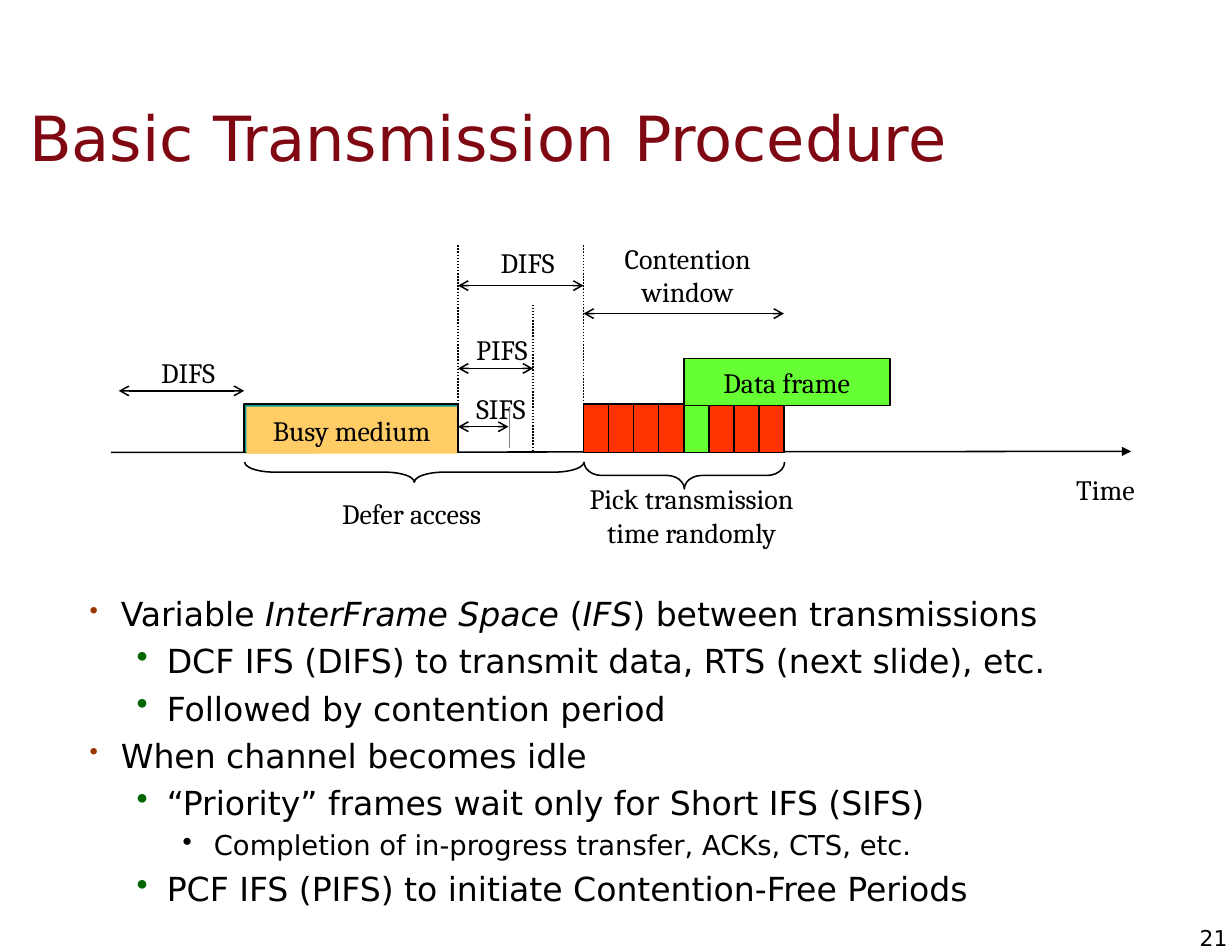
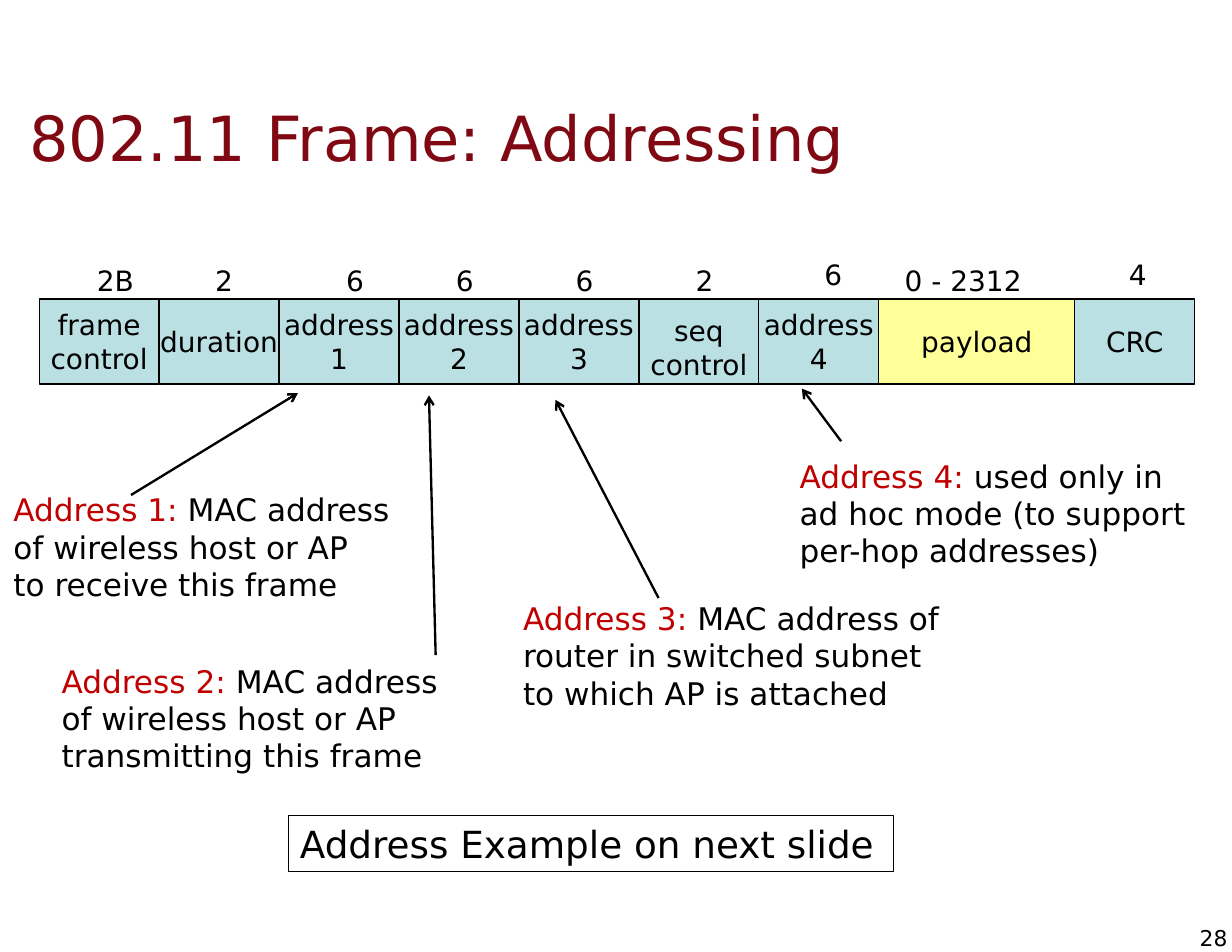
from dataclasses import dataclass

from lxml import etree
from pptx import Presentation
from pptx.dml.color import RGBColor
from pptx.enum.dml import MSO_LINE
from pptx.enum.shapes import MSO_CONNECTOR, MSO_SHAPE
from pptx.enum.text import MSO_ANCHOR, PP_ALIGN
from pptx.oxml.ns import qn
from pptx.util import Inches, Pt

RECTANGLE, BRACE = MSO_SHAPE.RECTANGLE, MSO_SHAPE.LEFT_BRACE
STRAIGHT, DOTTED = MSO_CONNECTOR.STRAIGHT, MSO_LINE.ROUND_DOT
TOP, MIDDLE = MSO_ANCHOR.TOP, MSO_ANCHOR.MIDDLE
LEFT, CENTER, RIGHT = PP_ALIGN.LEFT, PP_ALIGN.CENTER, PP_ALIGN.RIGHT

COLORS = {
    "title": "7F0813", "text": "000000", "address": "C00000",
    "bullet1": "993300", "bullet2": "006600", "bullet3": "000000",
    "busy": "FFCC66", "busy edge": "009999", "slot": "FF3300",
    "data": "66FF33", "marker": "808080",
    "header": "BBE0E3", "payload": "FFFF99",
}
SANS, SERIF = "DejaVu Sans", "Cambria"
COLUMNS, ROWS = 110, 85
CELL = 0.1  # one grid column or row, in inches
PLAIN_INSETS = (0.1, 0.05)
WIDE_INSETS = (0.11, 0.06)


def units(value):
    return Inches(value * CELL)


def color(name):
    return RGBColor.from_string(COLORS[name])


@dataclass
class Region:
    """A part of a slide; everything inside is placed from its corner."""
    slide: object
    column: float
    row: float

    def point(self, column, row):
        return units(self.column + column), units(self.row + row)

    def text(self, column, row, width, height, paragraphs, size=18, font=SANS,
             align=CENTER, anchor=TOP, wrap=False, insets=PLAIN_INSETS):
        shape = self.slide.shapes.add_textbox(
            *self.point(column, row), units(width), units(height))
        write(shape, paragraphs, size, font, align, anchor, wrap, insets)
        return shape

    def shape(self, kind, column, row, width, height, fill=None, line=1):
        shape = self.slide.shapes.add_shape(
            kind, *self.point(column, row), units(width), units(height))
        shape.shadow.inherit = False
        if fill:
            shape.fill.solid()
            shape.fill.fore_color.rgb = color(fill)
        else:
            shape.fill.background()
        if line:
            shape.line.color.rgb = color("text")
            shape.line.width = Pt(line)
        else:
            shape.line.fill.background()
        return shape

    def line(self, start, end, width=1, head=None, tail=None, dash=None, ink="text"):
        connector = self.slide.shapes.add_connector(
            STRAIGHT, *self.point(*start), *self.point(*end))
        connector.line.color.rgb = color(ink)
        connector.line.width = Pt(width)
        if dash:
            connector.line.dash_style = dash
        outline = connector.line._get_or_add_ln()
        for tag, arrow in (("a:headEnd", head), ("a:tailEnd", tail)):
            if arrow:
                etree.SubElement(outline, qn(tag), type=arrow)
        etree.SubElement(connector._element.spPr, qn("a:effectLst"))


def add_runs(paragraph, runs, size, font):
    """Each run is a string or (string, color name, italic)."""
    for run_data in runs:
        text, ink, italic = (run_data, "text", False) if isinstance(run_data, str) else run_data
        if text == "\n":
            paragraph.add_line_break()
            continue
        run = paragraph.add_run()
        run.text = text
        run.font.size = Pt(size)
        run.font.name = font
        run.font.italic = italic
        run.font.color.rgb = color(ink)


def write(shape, paragraphs, size=18, font=SANS, align=CENTER, anchor=MIDDLE,
          wrap=False, insets=PLAIN_INSETS):
    frame = shape.text_frame
    frame.word_wrap = wrap
    frame.vertical_anchor = anchor
    frame.margin_left = frame.margin_right = Inches(insets[0])
    frame.margin_top = frame.margin_bottom = Inches(insets[1])
    for index, runs in enumerate(paragraphs):
        paragraph = frame.paragraphs[0] if index == 0 else frame.add_paragraph()
        paragraph.alignment = align
        add_runs(paragraph, [runs] if isinstance(runs, str) else runs, size, font)


def new_slide(presentation, title, number):
    """Blank slide with the shared title and page number."""
    slide = presentation.slides.add_slide(presentation.slide_layouts[6])
    page = Region(slide, 0, 0)
    page.text(1.5, 7, COLUMNS - 3, 10.4, [[(title, "title", False)]], size=40,
              align=LEFT, anchor=MIDDLE, wrap=True, insets=WIDE_INSETS)
    page.text(COLUMNS - 3.8, ROWS - 2.5, 3.4, 2.4, [number], size=14,
              align=RIGHT, anchor=MIDDLE, insets=(0, 0))
    return slide


def timing_diagram(region):
    busy_start, busy_end, pifs_end, window_start, window_end = 11.8, 30.9, 37.6, 42.1, 60
    bar_top, bar_height = 15.1, 4.3

    # Time axis
    region.line((-0.1, 19.4), (91, 19.3), tail="triangle")

    # Dotted limits of the frame spaces
    for column, top, bottom in ((busy_end, 0.9, 18.7), (window_start, 0.9, 18.7),
                                (pifs_end, 6.2, 19.2)):
        region.line((column, top), (column, bottom), dash=DOTTED)

    # Double arrows over each interval
    for start, end, row in ((0.6, busy_start, 13.9), (busy_end, window_start, 4.5),
                            (busy_end, pifs_end, 11.9), (busy_end, 35.4, 17.1),
                            (window_start, window_end, 7)):
        region.line((start, row), (end, row), head="arrow", tail="arrow")

    # Labels on one line
    for label, column, row, width in (("DIFS", 2.4, 10.2, 7.8), ("DIFS", 32.7, 0.4, 7.8),
                                      ("PIFS", 31, 8.1, 7.1), ("SIFS", 31, 13.4, 6.9),
                                      ("Time", 84.6, 20.6, 7.7)):
        region.text(column, row, width, 4.1, [label], font=SERIF, align=RIGHT, anchor=MIDDLE)

    # Centred labels
    for lines, column, row, width, height in (
            (["Contention", "window"], 43.9, 0, 15, 7.1),
            (["Defer access"], 15, 22.7, 23.5, 4.2),
            (["Pick transmission time randomly"], 40, 21.4, 23.5, 7.2)):
        region.text(column, row, width, height, lines, font=SERIF, anchor=MIDDLE, wrap=True)

    # Busy medium
    region.shape(RECTANGLE, busy_start, bar_top, busy_end - busy_start, bar_height, "busy edge")
    busy = region.shape(RECTANGLE, busy_start + 0.2, bar_top + 0.2, 18.8, 4.2, "busy", line=None)
    write(busy, ["Busy medium"], font=SERIF, wrap=True)

    # Contention slots, the fifth one taken by the data frame
    slot_count, chosen = 8, 4
    slot_width = (window_end - window_start) / slot_count
    for slot in range(slot_count):
        region.shape(RECTANGLE, window_start + slot * slot_width, bar_top, slot_width,
                     bar_height, "data" if slot == chosen else "slot")
    data = region.shape(RECTANGLE, window_start + chosen * slot_width, 11, 18.4, 4.2, "data")
    write(data, ["Data frame"], font=SERIF, wrap=True)

    # Braces under the axis, turned to open upwards
    for center_column, center_row, depth, length, curve in (
            (27, 21.15, 1.8, 30.3, 1.47), (51.1, 21.45, 2.4, 17.9, 0.65)):
        brace = region.shape(BRACE, center_column - depth / 2, center_row - length / 2,
                             depth, length)
        brace.rotation = 270
        brace.adjustments[0] = curve

    # End of the short frame space
    region.line((35.5, 19), (35.5, 15.4), width=0.75, ink="marker")


def bullet_list(region, width, height, items):
    """Items are (level, runs)."""
    levels = (  # left margin, hanging indent, bullet size, text size, space before
        (0.42, 0.28, 75, 21.3, 4.8), (0.83, 0.27, 100, 21.3, 4.8), (1.25, 0.28, 100, 17.6, 4))
    shape = region.text(0, 0, width, height, [], wrap=True, insets=WIDE_INSETS)
    frame = shape.text_frame
    for index, (level, runs) in enumerate(items):
        margin, hanging, bullet_size, size, space = levels[level]
        paragraph = frame.paragraphs[0] if index == 0 else frame.add_paragraph()
        properties = paragraph._p.get_or_add_pPr()
        properties.set("marL", str(Inches(margin)))
        properties.set("indent", str(-Inches(hanging)))
        bullet_color = etree.SubElement(properties, qn("a:buClr"))
        etree.SubElement(bullet_color, qn("a:srgbClr"), val=COLORS[f"bullet{level + 1}"])
        etree.SubElement(properties, qn("a:buSzPct"), val=str(bullet_size * 1000))
        etree.SubElement(properties, qn("a:buChar"), char="•")
        paragraph.level = level
        paragraph.space_before = Pt(space if index else 0)
        add_runs(paragraph, runs, size, SANS)


def frame_layout(region):
    header_width, payload_width, top, height = 10.71, 17.5, 4.2, 7.6
    # Fields: label lines, centre and row of the length label, length
    fields = (
        (["frame", "control"], 6.8, 0.5, "2B"), (["duration"], 16.5, 0.5, "2"),
        (["address", "1"], 28.2, 0.5, "6"), (["address", "2"], 38, 0.5, "6"),
        (["address", "3"], 48.7, 0.5, "6"), (["seq", "control"], 59.4, 0.5, "2"),
        (["address", "4"], 70.9, 0, "6"), (["payload"], 82.5, 0.5, "0 - 2312"),
        (["CRC"], 98.1, 0, "4"))
    left = 0
    for lines, length_center, length_row, length in fields:
        is_payload = lines == ["payload"]
        width = payload_width if is_payload else header_width
        field = region.shape(RECTANGLE, left, top, width, height,
                             "payload" if is_payload else "header", line=0.75)
        if lines[0] == "seq":
            region.text(left, top + 0.8, width, 7.1, lines)
        else:
            write(field, lines)
        region.text(length_center - 6.5, length_row, 13, 4, [length])
        left += width


def address_notes(region):
    # Notes: number, corner, width, paragraphs after the heading, arrow
    notes = (
        (2, (4.4, 24.5), 49.6,
         [["MAC address"], ["of wireless host or AP"], ["transmitting this frame"]],
         (38.9, 24.5), (38.3, 1.3)),
        (1, (0.1, 9.2), 40.9,
         [["MAC address"], ["of wireless host or AP"], ["to receive this frame"]],
         (11.7, 10.2), (26.6, 1.1)),
        (3, (45.6, 18.9), 40.5,
         [["MAC address of router in switched subnet to which AP is attached"]],
         (58.8, 19.4), (49.6, 1.7)),
        (4, (70.3, 6.2), 39.7,
         [["used only in ", "\n", "ad hoc mode (to support per-hop addresses)"]],
         (75.1, 5.4), (71.6, 0.7)))
    for number, corner, width, (first, *rest), start, end in notes:
        heading = (f"Address {number}: ", "address", False)
        region.text(*corner, width, 11.2, [[heading, *first], *rest], size=20,
                    align=LEFT, wrap=True, insets=WIDE_INSETS)
        region.line(start, end, width=1.5, tail="arrow")


def boxed_remark(region, width, height, text):
    box = region.shape(RECTANGLE, 0, 0, width, height, line=0.75)
    write(box, [text], size=24, align=LEFT)


def main():
    presentation = Presentation()
    presentation.slide_width, presentation.slide_height = units(COLUMNS), units(ROWS)

    # Transmission procedure
    slide = new_slide(presentation, "Basic Transmission Procedure", "21")
    timing_diagram(Region(slide, 10, 21))
    bullet_list(Region(slide, 5.5, 52.4), 99, 29.2, (
        (0, ["Variable ", ("InterFrame Space ", "text", True), "(", ("IFS", "text", True),
             ") between transmissions"]),
        (1, ["DCF IFS (DIFS) to transmit data, RTS (next slide), etc."]),
        (1, ["Followed by contention period"]),
        (0, ["When channel becomes idle"]),
        (1, ["“Priority” frames wait only for Short IFS (SIFS)"]),
        (2, ["Completion of in-progress transfer, ACKs, CTS, etc."]),
        (1, ["PCF IFS (PIFS) to initiate Contention-Free Periods"])))

    # Frame addressing
    slide = new_slide(presentation, "802.11 Frame: Addressing", "28")
    frame_layout(Region(slide, 3.5, 22.5))
    address_notes(Region(slide, 0, 34))
    boxed_remark(Region(slide, 25.8, 72.8), 54, 5, "Address Example on next slide")

    presentation.save("out.pptx")


if __name__ == "__main__":
    main()
